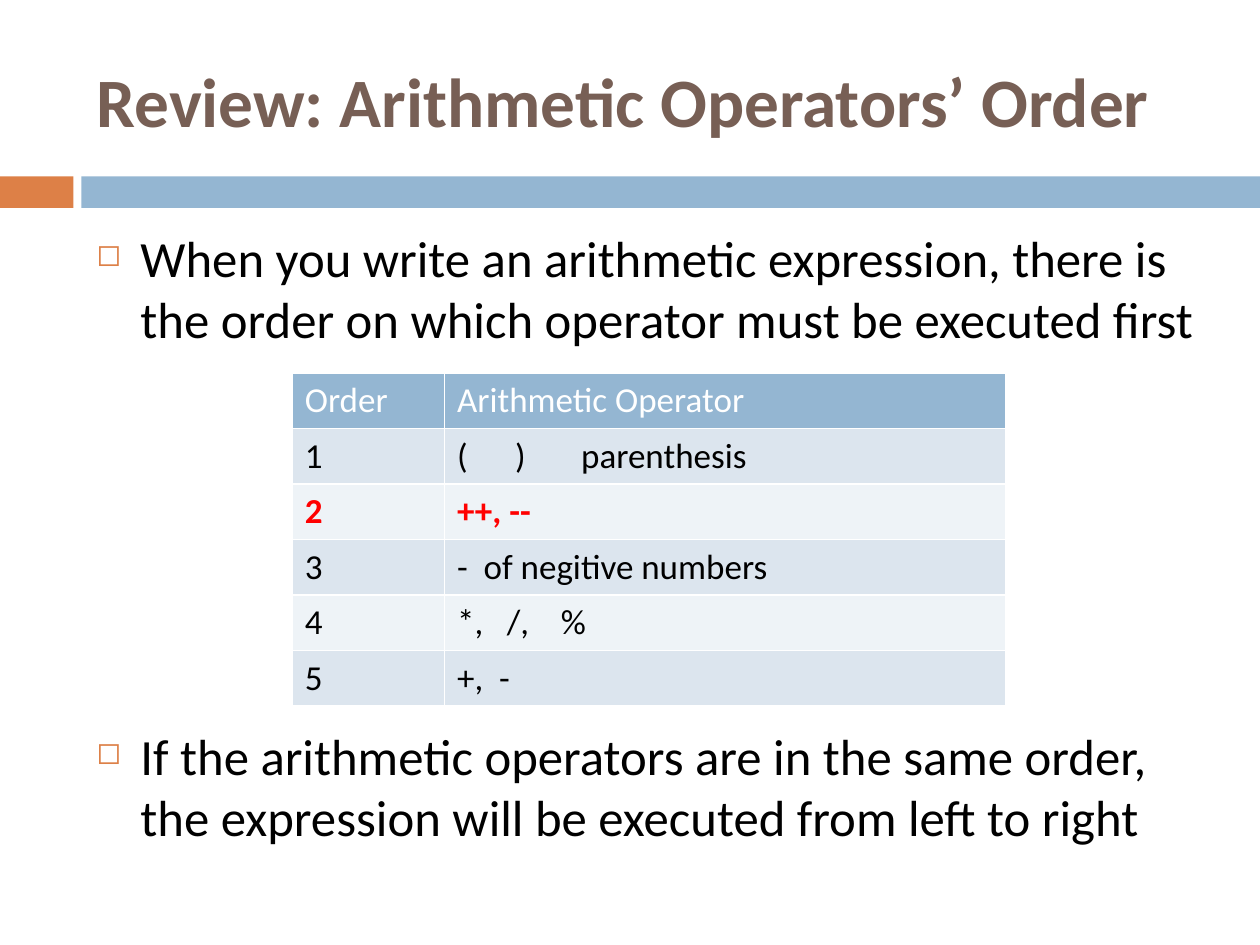
from lxml.etree import SubElement
from pptx import Presentation
from pptx.dml.color import RGBColor
from pptx.enum.shapes import MSO_SHAPE
from pptx.enum.text import MSO_ANCHOR, PP_ALIGN
from pptx.oxml.ns import qn
from pptx.util import Pt

FONT = "Calibri"
ORANGE = RGBColor(0xDD, 0x80, 0x47)
BLUE = RGBColor(0x94, 0xB6, 0xD2)
BROWN = RGBColor(0x77, 0x5F, 0x55)
BAND_DARK = RGBColor(0xDC, 0xE5, 0xEE)
BAND_LIGHT = RGBColor(0xEE, 0xF3, 0xF7)
WHITE = RGBColor(0xFF, 0xFF, 0xFF)
BLACK = RGBColor(0, 0, 0)
RED = RGBColor(0xFF, 0, 0)

LEFT = 48
BULLETS = [
    ("When you write an arithmetic expression, there is the order "
     "on which operator must be executed first", 0),
    ("If the arithmetic operators are in the same order, the expression "
     "will be executed from left to right", 215),  # room for the table
]
ROWS = [
    ("Order", "Arithmetic Operator"),
    ("1", "(      )       parenthesis"),
    ("2", "++, --"),
    ("3", "-  of negitive numbers"),
    ("4", "*,   /,    %"),
    ("5", "+,  -"),
]
HIGHLIGHT_ROW = 2
COLUMN_WIDTHS = (87, 321)
ROW_HEIGHT = 31.7


def add_run(p, text, size, color, bold=False):
    r = p.add_run()
    r.text = text
    r.font.name = FONT
    r.font.size = Pt(size)
    r.font.bold = bold
    r.font.color.rgb = color


def add_bar(s, left, width, color):
    sp = s.shapes.add_shape(MSO_SHAPE.RECTANGLE, Pt(left), Pt(100.8),
                            Pt(width), Pt(18))
    sp.shadow.inherit = False
    sp.fill.solid()
    sp.fill.fore_color.rgb = color
    sp.line.fill.background()


def set_title(s, text):
    title = s.shapes.title
    title.left, title.top = Pt(LEFT), Pt(18)
    title.width, title.height = Pt(642), Pt(78)
    tf = title.text_frame
    tf.vertical_anchor = MSO_ANCHOR.MIDDLE
    p = tf.paragraphs[0]
    p.alignment = PP_ALIGN.LEFT
    add_run(p, text, 39.6, BROWN, bold=True)


def set_bullet(p):
    pPr = p._p.get_or_add_pPr()
    pPr.set("marL", str(Pt(25.2)))
    pPr.set("indent", str(-Pt(25.2)))
    color = SubElement(pPr, qn("a:buClr"))
    SubElement(color, qn("a:srgbClr"), val=str(ORANGE))
    SubElement(pPr, qn("a:buSzPct"), val="60000")
    SubElement(pPr, qn("a:buChar"), char="◻")


def add_bullets(s, items):
    tf = s.shapes.add_textbox(Pt(LEFT), Pt(126), Pt(650), Pt(388)).text_frame
    tf.word_wrap = True
    for i, (text, space) in enumerate(items):
        p = tf.add_paragraph() if i else tf.paragraphs[0]
        p.space_before = Pt(space)
        set_bullet(p)
        add_run(p, text, 29, BLACK)


def set_borders(cell, bottom):
    tcPr = cell._tc.get_or_add_tcPr()
    widths = {"a:lnL": 1, "a:lnR": 1, "a:lnT": 1, "a:lnB": bottom}
    for i, (tag, width) in enumerate(widths.items()):
        ln = SubElement(tcPr, qn(tag), w=str(Pt(width)))
        fill = SubElement(ln, qn("a:solidFill"))
        SubElement(fill, qn("a:srgbClr"), val=str(WHITE))
        tcPr.insert(i, ln)  # borders come before the fill


def add_order_table(s):
    table = s.shapes.add_table(
        len(ROWS), len(COLUMN_WIDTHS), Pt(167), Pt(213.3),
        Pt(sum(COLUMN_WIDTHS)), Pt(ROW_HEIGHT * len(ROWS))).table
    for column, width in zip(table.columns, COLUMN_WIDTHS):
        column.width = Pt(width)
    for i, texts in enumerate(ROWS):
        table.rows[i].height = Pt(ROW_HEIGHT)
        hot = i == HIGHLIGHT_ROW
        if i == 0:
            fill, color = BLUE, WHITE
        else:
            fill = BAND_DARK if i % 2 else BAND_LIGHT
            color = RED if hot else BLACK
        for j, text in enumerate(texts):
            cell = table.cell(i, j)
            cell.fill.solid()
            cell.fill.fore_color.rgb = fill
            set_borders(cell, bottom=1)
            add_run(cell.text_frame.paragraphs[0], text, 20, color, bold=hot)


def main():
    prs = Presentation()
    prs.slide_width, prs.slide_height = Pt(720), Pt(540)
    s = prs.slides.add_slide(prs.slide_layouts[5])

    # Divider under the title
    add_bar(s, 0, 42, ORANGE)
    add_bar(s, 46.5, 673.5, BLUE)

    # Title, text and table
    set_title(s, "Review: Arithmetic Operators’ Order")
    add_bullets(s, BULLETS)
    add_order_table(s)

    prs.save("out.pptx")


if __name__ == "__main__":
    main()
